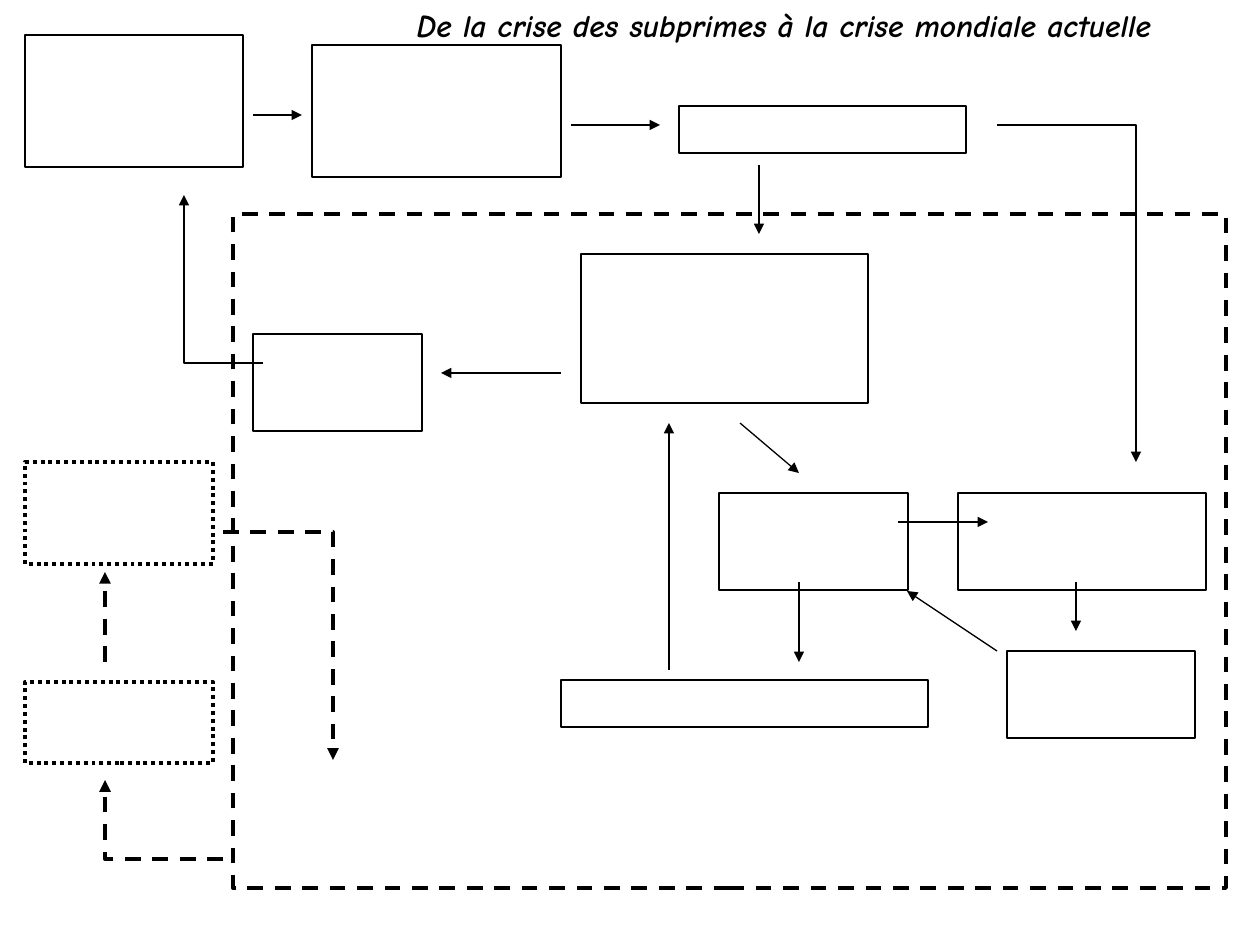
"""Builds a flow diagram slide about the subprime crisis, with empty boxes to fill in."""
from dataclasses import dataclass

from lxml import etree
from pptx import Presentation
from pptx import util as u
from pptx.dml.color import RGBColor
from pptx.enum import dml, shapes, text
from pptx.oxml.ns import qn

PX = u.Inches(1) / 126


@dataclass(frozen=True)
class Theme:
    ink: RGBColor = RGBColor(0, 0, 0)
    paper: RGBColor = RGBColor(255, 255, 255)
    font: str = "Comic Neue"
    title: float = 18
    thin: float = 0.75
    thick: float = 2.25


T = Theme()
DASH, DOT = dml.MSO_LINE.DASH, dml.MSO_LINE.ROUND_DOT

TITLE = ("De la crise des subprimes à la crise mondiale actuelle", (404, 0, 760, 50))
FRAME = (233, 214, 993, 674)
BOXES = [
    (25, 35, 218, 132), (312, 45, 249, 132), (679, 106, 287, 47),
    (581, 254, 287, 149), (253, 334, 169, 97), (719, 493, 189, 97),
    (958, 493, 248, 97), (1007, 651, 188, 87), (561, 680, 367, 47),
]
DOTTED_BOXES = [(25, 682, 188, 81), (25, 462, 188, 102)]
ARROWS = [
    [(253, 115), (302, 115)],
    [(571, 125), (660, 125)],
    [(759, 165), (759, 234)],
    [(561, 373), (441, 373)],
    [(740, 423), (799, 473)],
    [(997, 125), (1136, 125), (1136, 462)],
    [(898, 522), (988, 522)],
    [(799, 582), (799, 662)],
    [(263, 363), (184, 363), (184, 195)],
    [(669, 670), (669, 423)],
    [(1076, 582), (1076, 631)],
    [(997, 651), (907, 591)],
]
DASHED_ARROWS = [
    [(223, 859), (105, 859), (105, 780)],
    [(105, 662), (105, 572)],
    [(223, 532), (333, 532), (333, 760)],
]


def emu(values):
    return [round(v * PX) for v in values]


def style_line(sp, width, dash):
    sp.line.color.rgb = T.ink
    sp.line.width = u.Pt(width)
    if dash:
        sp.line.dash_style = dash


def add_box(slide, box, width=T.thin, dash=None, filled=True):
    sp = slide.shapes.add_shape(shapes.MSO_SHAPE.RECTANGLE, *emu(box))
    sp.shadow.inherit = False
    if filled:
        sp.fill.solid()
        sp.fill.fore_color.rgb = T.paper
    else:
        sp.fill.background()
    style_line(sp, width, dash)


def add_arrow(slide, points, width=T.thin, dash=None):
    start, *rest = [emu(pt) for pt in points]
    if len(rest) == 1:
        sp = slide.shapes.add_connector(shapes.MSO_CONNECTOR.STRAIGHT, *start, *rest[0])
    else:
        builder = slide.shapes.build_freeform(*start)
        builder.add_line_segments(rest, close=False)
        sp = builder.convert_to_shape()
        sp.fill.background()
    style_line(sp, width, dash)
    etree.SubElement(sp.line._get_or_add_ln(), qn("a:tailEnd"), type="triangle")
    etree.SubElement(sp._element.spPr, qn("a:effectLst"))


def add_title(slide, words, box):
    tf = slide.shapes.add_textbox(*emu(box)).text_frame
    tf.word_wrap = False
    tf.auto_size = text.MSO_AUTO_SIZE.SHAPE_TO_FIT_TEXT
    p = tf.paragraphs[0]
    p.text = words
    p.alignment = text.PP_ALIGN.CENTER
    p.font.name, p.font.size = T.font, u.Pt(T.title)
    p.font.bold = p.font.italic = True
    p.font.color.rgb = T.ink


def main():
    prs = Presentation()
    prs.slide_width, prs.slide_height = u.Inches(10), u.Inches(7.5)
    slide = prs.slides.add_slide(prs.slide_layouts[6])
    for box in BOXES:
        add_box(slide, box)
    for points in ARROWS:
        add_arrow(slide, points)
    add_box(slide, FRAME, T.thick, DASH, filled=False)
    for box in DOTTED_BOXES:
        add_box(slide, box, T.thick, DOT)
    for points in DASHED_ARROWS:
        add_arrow(slide, points, T.thick, DASH)
    add_title(slide, *TITLE)
    prs.save("out.pptx")


if __name__ == "__main__":
    main()
